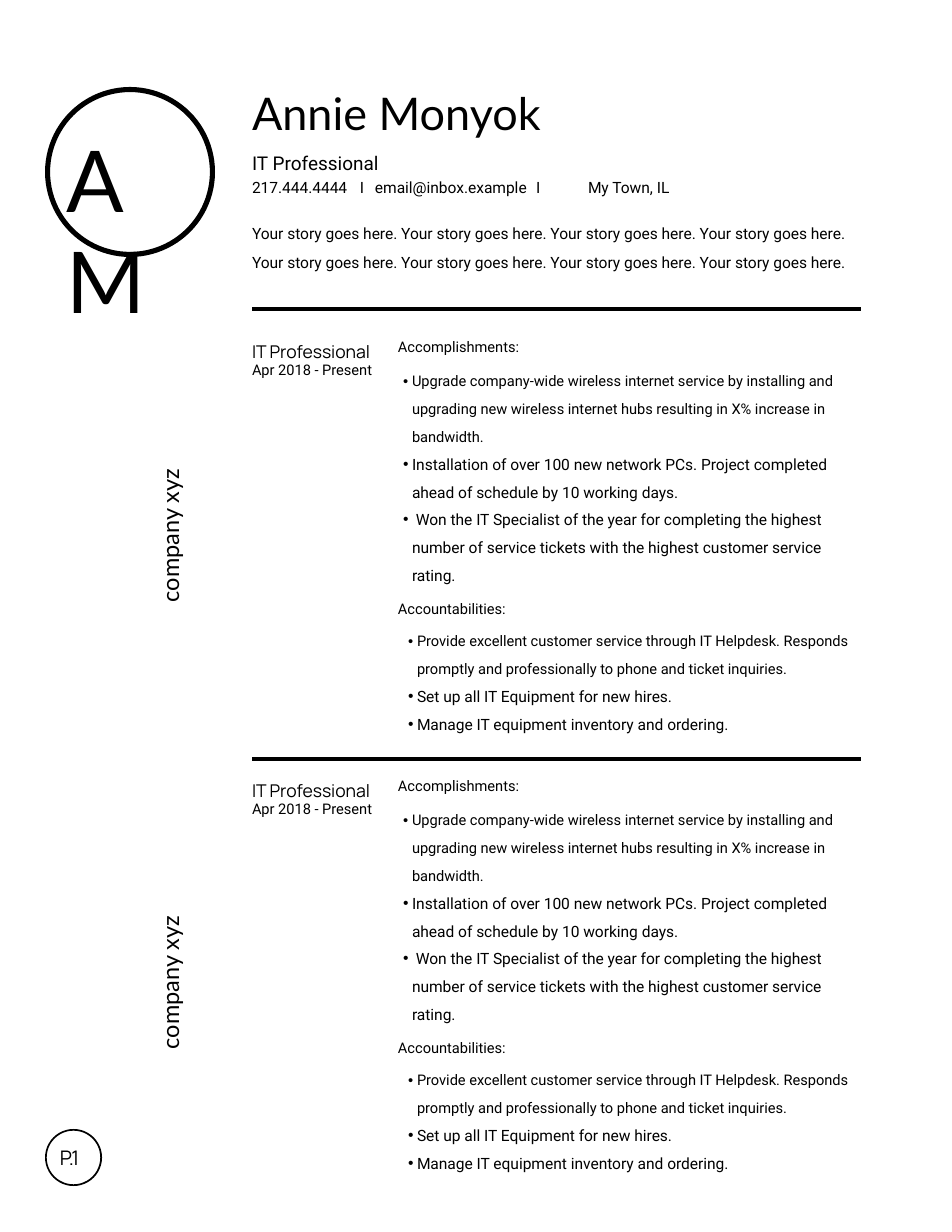
from lxml.etree import SubElement
from pptx import Presentation
from pptx.dml.color import RGBColor
from pptx.enum.shapes import MSO_CONNECTOR as Connector, MSO_SHAPE as Shape
from pptx.enum.text import MSO_ANCHOR as Anchor, MSO_AUTO_SIZE as AutoSize, PP_ALIGN as Align
from pptx.oxml.ns import qn
from pptx.util import Pt

EMU_PER_PX = 914400 / 112
COLORS = {"ink": "000000", "paper": "FFFFFF"}
COMPARISON_LAYOUT = 4  # a title and four bodies
SECTION_STEP = 439
COMPANY_STEP = 447

# Font, size and exact line height in points
STYLES = {
    "name": ("Lato", 28.9, 34.4),
    "monogram": ("Lato", 54.8, 65.2),
    "company": ("Lato", 15.1, 17.9),
    "page": ("Manrope", 12.9, 15.3),
    "role": ("Manrope", 11.3, 15.8),
    "job": ("Roboto", 12.2, 17.1),
    "contact": ("Roboto", 10, 14.1),
    "story": ("Roboto", 10, 19),
    "label": ("Roboto", 9.4, 13.2),
    "first bullet": ("Roboto", 9.4, 17.9),
    "bullet": ("Roboto", 10, 17.9),
}
FRAME_FORMAT = {
    "margin_left": 0, "margin_top": 0, "margin_right": 0, "margin_bottom": 0,
    "word_wrap": True, "vertical_anchor": Anchor.TOP,
    "auto_size": AutoSize.SHAPE_TO_FIT_TEXT,
}

STORY = " ".join(["Your story goes here."] * 8)
CONTACT = "217.444.4444\tI\temail@inbox.example\tI\tMy Town, IL"
CONTACT_TABS = (108, 123, 269, 284)
ACCOMPLISHMENTS = (
    "Upgrade company-wide wireless internet service by installing and upgrading "
    "new wireless internet hubs resulting in X% increase in bandwidth.",
    "Installation of over 100 new network PCs. Project completed ahead of "
    "schedule by 10 working days.",
    " Won the IT Specialist of the year for completing the highest number of "
    "service tickets with the highest customer service rating.",
)
ACCOUNTABILITIES = (
    "Provide excellent customer service through IT Helpdesk. Responds promptly "
    "and professionally to phone and ticket inquiries.",
    "Set up all IT Equipment for new hires.",
    "Manage IT equipment inventory and ordering.",
)


def px(length):
    return round(length * EMU_PER_PX)


def color(name):
    return RGBColor.from_string(COLORS[name])


def apply_format(target, values):
    for name, value in values.items():
        setattr(target, name, value)


def place(shape, box):
    apply_format(shape, dict(zip(("left", "top", "width", "height"), map(px, box))))


def write(shape, lines, align=Align.LEFT):
    """Fill a shape with (text, style) lines."""
    frame = shape.text_frame
    apply_format(frame, FRAME_FORMAT)
    for index, (text, style) in enumerate(lines):
        font, size, height = STYLES[style]
        paragraph = frame.add_paragraph() if index else frame.paragraphs[0]
        apply_format(paragraph, {
            "alignment": align, "line_spacing": Pt(height),
            "space_before": Pt(0), "space_after": Pt(0),
        })
        run = paragraph.add_run()
        run.text = text
        apply_format(run.font, {"name": font, "size": Pt(size), "bold": False})
        run.font.color.rgb = color("ink")
    return frame.paragraphs


def add_text(slide, box, *lines, align=Align.LEFT, rotation=0):
    shape = slide.shapes.add_textbox(*map(px, box))
    shape.rotation = rotation
    return write(shape, lines, align)


def fill_list(placeholder, box, items):
    place(placeholder, box)
    styles = ["first bullet"] + ["bullet"] * (len(items) - 1)
    for paragraph in write(placeholder, list(zip(items, styles))):
        paragraph.level = 1
        properties = paragraph._p.get_or_add_pPr()
        properties.set("marL", str(px(19)))
        properties.set("indent", str(px(-9)))
        SubElement(properties, qn("a:buChar")).set("char", "•")


def set_tabs(paragraph, positions):
    tabs = SubElement(paragraph._p.get_or_add_pPr(), qn("a:tabLst"))
    for position in positions:
        tab = SubElement(tabs, qn("a:tab"))
        tab.set("pos", str(px(position)))
        tab.set("algn", "l")


def add_ring(slide, left, top, size, thickness):
    ring = slide.shapes.add_shape(Shape.DONUT, *map(px, (left, top, size, size)))
    ring.adjustments[0] = thickness
    ring.shadow.inherit = False
    ring.fill.solid()
    ring.fill.fore_color.rgb = color("ink")
    ring.line.fill.background()


def add_rule(slide, y):
    rule = slide.shapes.add_connector(Connector.STRAIGHT, px(252), px(y), px(861), px(y))
    rule.line.width = Pt(2)
    rule.line.color.rgb = color("ink")
    SubElement(rule._element.spPr, qn("a:effectLst"))


def add_header(slide):
    place(slide.shapes.title, (252, 86, 535, 55))
    write(slide.shapes.title, [("Annie Monyok", "name")])
    contact = add_text(slide, (252, 148, 535, 49),
                       ("IT Professional", "job"), (CONTACT, "contact"))
    set_tabs(contact[-1], CONTACT_TABS)
    add_text(slide, (252, 213, 605, 57), (STORY, "story"))


def add_section(slide, index, bodies):
    shift = index * SECTION_STEP
    add_text(slide, (47, 522 + index * COMPANY_STEP, 245, 27),
             ("company xyz", "company"), align=Align.CENTER, rotation=270)
    add_text(slide, (252, 337 + shift, 179, 22), ("IT Professional", "role"))
    add_text(slide, (252, 358 + shift, 179, 20), ("Apr 2018 - Present", "label"))
    add_text(slide, (398, 335 + shift, 176, 20), ("Accomplishments:", "label"))
    fill_list(bodies[0], (393, 362 + shift, 468, 189), ACCOMPLISHMENTS)
    add_text(slide, (398, 597 + shift, 176, 20), ("Accountabilities:", "label"))
    fill_list(bodies[1], (398, 622 + shift, 459, 134), ACCOUNTABILITIES)


def main():
    presentation = Presentation()
    presentation.slide_width, presentation.slide_height = px(952), px(1232)
    slide = presentation.slides.add_slide(presentation.slide_layouts[COMPARISON_LAYOUT])
    slide.background.fill.solid()
    slide.background.fill.fore_color.rgb = color("paper")

    # Monogram and page number
    add_ring(slide, 45, 87, 170, 0.03)
    add_text(slide, (67, 128, 125, 103), ("AM", "monogram"))
    add_ring(slide, 45, 1129, 57, 0.03)
    add_text(slide, (60, 1146, 24, 24), ("P.1", "page"))

    # Header and the two jobs, each under a rule
    add_header(slide)
    bodies = list(slide.placeholders)[1:]
    for index, rule_y in enumerate((309, 759)):
        add_rule(slide, rule_y)
        add_section(slide, index, bodies[2 * index:2 * index + 2])

    presentation.save("out.pptx")


if __name__ == "__main__":
    main()
